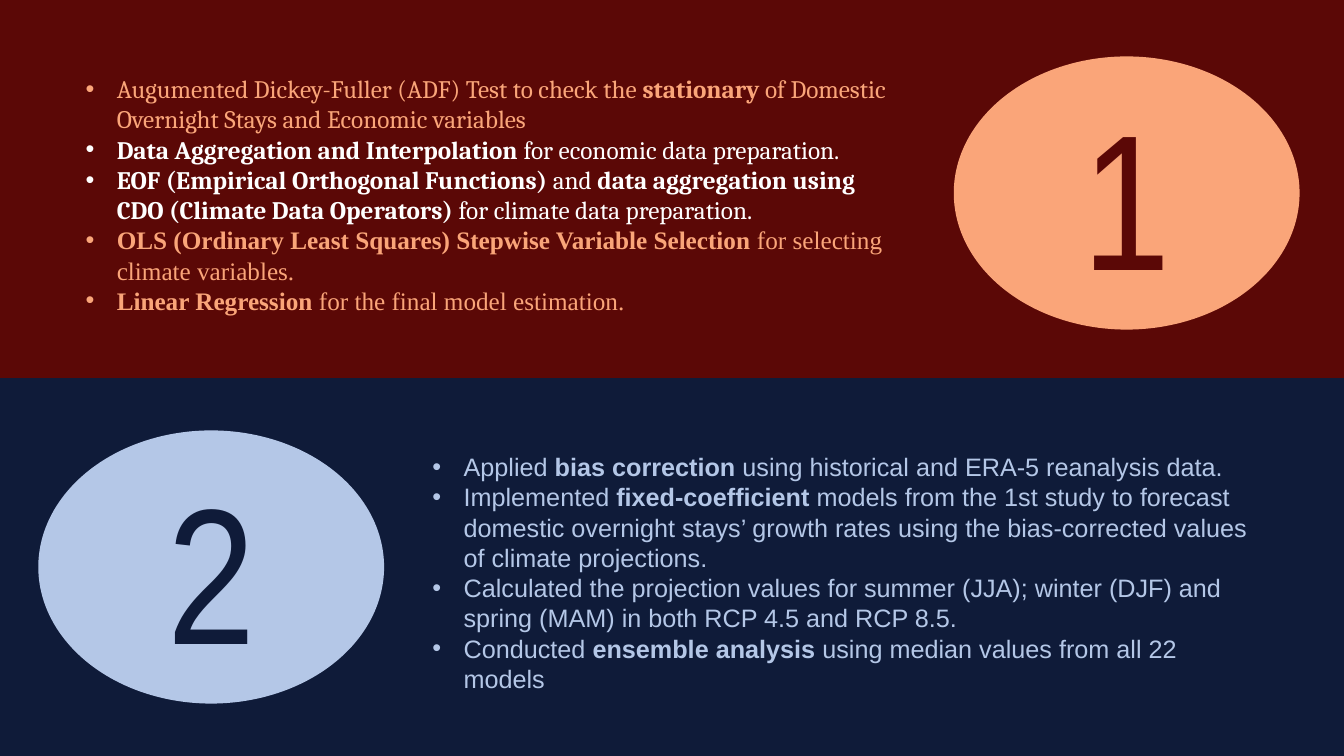
from dataclasses import dataclass

from lxml import etree
from pptx import Presentation
from pptx.dml.color import RGBColor
from pptx.enum.shapes import MSO_SHAPE
from pptx.enum.text import MSO_ANCHOR, PP_ALIGN
from pptx.oxml.ns import qn
from pptx.util import Inches, Pt

RECT, OVAL = MSO_SHAPE.RECTANGLE, MSO_SHAPE.OVAL
MIDDLE, CENTER, LEFT = MSO_ANCHOR.MIDDLE, PP_ALIGN.CENTER, PP_ALIGN.LEFT


@dataclass(frozen=True)
class Theme:
    maroon: str = "5B0806"
    navy: str = "0F1B39"
    peach: str = "FAA579"
    sky: str = "B4C7E7"
    white: str = "FFFFFF"
    body: int = 18
    digit: int = 138


THEME = Theme()
WIDTH, HEIGHT = 13.33, 7.5
BAND = HEIGHT / 2
INDENT = Inches(0.31)

# Each entry: text with **bold** spans, font, colour
METHODS = [
    ("Augumented Dickey-Fuller (ADF) Test to check the **stationary** of "
     "Domestic Overnight Stays and Economic variables", "Cambria", THEME.peach),
    ("**Data Aggregation and Interpolation** for economic data preparation.",
     "Cambria", THEME.white),
    ("**EOF (Empirical Orthogonal Functions)** and **data aggregation using "
     "CDO (Climate Data Operators)** for climate data preparation.",
     "Cambria", THEME.white),
    ("**OLS (Ordinary Least Squares) Stepwise Variable Selection** for "
     "selecting climate variables.", "Times New Roman", THEME.peach),
    ("**Linear Regression** for the final model estimation.",
     "Times New Roman", THEME.peach),
]
FORECAST = [(text, "Arial", THEME.sky) for text in (
    "Applied **bias correction** using historical and ERA-5 reanalysis data.",
    "Implemented **fixed-coefficient** models from the 1st study to forecast "
    "domestic overnight stays’ growth rates using the bias-corrected values "
    "of climate projections.",
    "Calculated the projection values for summer (JJA); winter (DJF) and "
    "spring (MAM) in both RCP 4.5 and RCP 8.5.",
    "Conducted **ensemble analysis **using median values from all 22 models",
)]


def add_bullet(para):
    props = para._p.get_or_add_pPr()
    props.set("marL", str(INDENT))
    props.set("indent", str(-INDENT))
    etree.SubElement(props, qn("a:buFont")).set("typeface", "Arial")
    etree.SubElement(props, qn("a:buChar")).set("char", "•")


def write(para, text, *, font, size, color, align=LEFT, bullet=False):
    """Fill a paragraph; spans between ** marks are bold."""
    if bullet:
        add_bullet(para)
    para.alignment = align
    for i, part in enumerate(text.split("**")):
        if part:
            run = para.add_run()
            run.text = part
            run.font.name = font
            run.font.size = Pt(size)
            run.font.bold = i % 2 == 1
            run.font.color.rgb = RGBColor.from_string(color)


def add_solid(slide, kind, left, top, width, height, fill):
    shape = slide.shapes.add_shape(
        kind, Inches(left), Inches(top), Inches(width), Inches(height))
    shape.shadow.inherit = False
    shape.fill.solid()
    shape.fill.fore_color.rgb = RGBColor.from_string(fill)
    shape.line.fill.background()
    return shape


def add_badge(slide, left, top, digit, fill, color):
    badge = add_solid(slide, OVAL, left, top, 3.43, 2.71, fill)
    frame = badge.text_frame
    frame.vertical_anchor = MIDDLE
    write(frame.paragraphs[0], digit, font="Arial Narrow", size=THEME.digit,
          color=color, align=CENTER)


def add_list(slide, left, top, height, items):
    box = slide.shapes.add_textbox(
        Inches(left), Inches(top), Inches(8.28), Inches(height))
    frame = box.text_frame
    frame.word_wrap = True
    for i, (text, font, color) in enumerate(items):
        para = frame.add_paragraph() if i else frame.paragraphs[0]
        write(para, text, font=font, size=THEME.body, color=color, bullet=True)


def main():
    deck = Presentation()
    deck.slide_width, deck.slide_height = Inches(WIDTH), Inches(HEIGHT)
    slide = deck.slides.add_slide(deck.slide_layouts[6])

    # Background bands
    for row, fill in enumerate((THEME.maroon, THEME.navy)):
        add_solid(slide, RECT, 0, row * BAND, WIDTH, BAND, fill)

    # Numbered ovals
    add_badge(slide, 9.46, 0.56, "1", THEME.peach, THEME.maroon)
    add_badge(slide, 0.38, 4.27, "2", THEME.sky, THEME.navy)

    # Bullet lists
    add_list(slide, 0.75, 0.68, 2.83, METHODS)
    add_list(slide, 4.19, 4.43, 2.52, FORECAST)

    deck.save("out.pptx")


if __name__ == "__main__":
    main()
